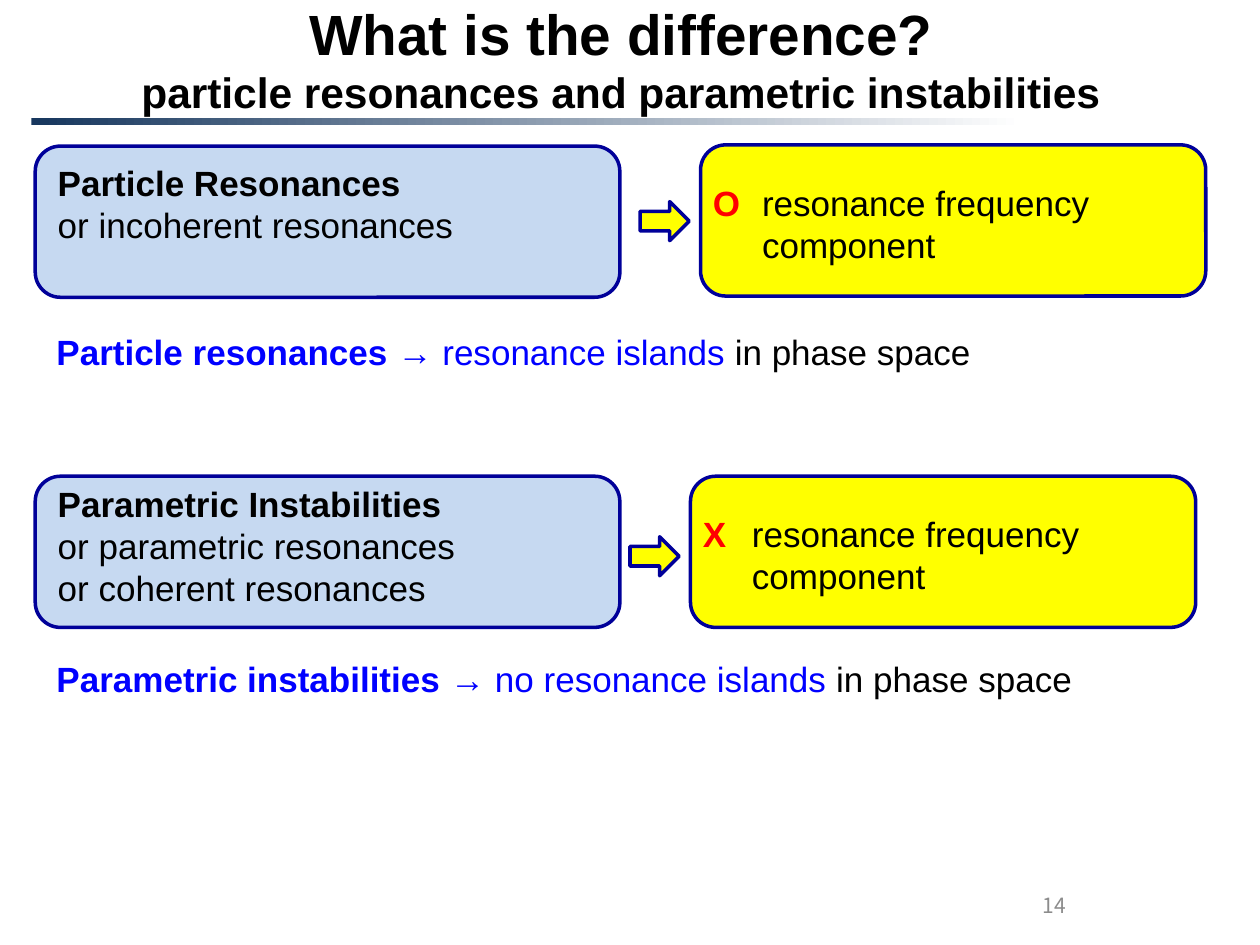
"""Build the slide comparing particle resonances and parametric instabilities."""
from dataclasses import dataclass

from pptx import Presentation
from pptx.dml.color import RGBColor
from pptx.enum.shapes import MSO_SHAPE
from pptx.enum.text import MSO_ANCHOR, PP_ALIGN
from pptx.util import Inches, Pt

COLORS = {
    "black": "000000", "white": "FFFFFF", "navy": "17375E", "outline": "000099",
    "panel": "C6D9F1", "yellow": "FFFF00", "red": "FF0000", "blue": "0000FF",
    "gray": "8C8C8C",
}


@dataclass
class Run:
    """A piece of text with one look."""
    text: str
    color: str = "black"
    bold: bool = False


@dataclass
class Topic:
    """One row: a named topic, its answer and the conclusion below."""
    names: list[str]
    name_top: float
    panel_top: float
    answer_left: float
    answer_top: float
    arrow_top: float
    mark: str
    conclusion_top: float
    conclusion: list[Run]


TOPICS = [
    Topic(["Particle Resonances", "or incoherent resonances"],
          1.23, 1.16, 5.56, 1.15, 1.6, "O", 2.57,
          [Run("Particle resonances ", "blue", True),
           Run("→ resonance islands ", "blue"), Run("in phase space")]),
    Topic(["Parametric Instabilities", "or parametric resonances",
           "or coherent resonances"],
          3.78, 3.78, 5.48, 3.78, 4.26, "X", 5.17,
          [Run("Parametric instabilities ", "blue", True),
           Run("→ no resonance islands ", "blue"), Run("in phase space")]),
]


def rgb(name: str) -> RGBColor:
    """Look up a colour."""
    return RGBColor.from_string(COLORS[name])


def add_block(s, kind, x: float, y: float, w: float, h: float, fill: str):
    """Add a filled, outlined shape."""
    sp = s.shapes.add_shape(kind, Inches(x), Inches(y), Inches(w), Inches(h))
    sp.shadow.inherit = False
    sp.fill.solid()
    sp.fill.fore_color.rgb = rgb(fill)
    sp.line.color.rgb = rgb("outline")
    sp.line.width = Pt(2)


def add_text(s, x: float, y: float, w: float, h: float, lines: list[list[Run]],
             sizes: tuple[float, ...] = (20,), font: str = "Arial",
             align=PP_ALIGN.LEFT, anchor=MSO_ANCHOR.TOP, hang: float = 0):
    """Add a text box with one paragraph for each line; the last size carries on."""
    tf = s.shapes.add_textbox(Inches(x), Inches(y), Inches(w), Inches(h)).text_frame
    tf.word_wrap = True
    tf.vertical_anchor = anchor
    for i, runs in enumerate(lines):
        p = tf.add_paragraph() if i else tf.paragraphs[0]
        p.alignment = align
        if hang:
            pPr = p._p.get_or_add_pPr()
            pPr.set("marL", str(Inches(hang)))
            pPr.set("indent", str(-Inches(hang)))
        p.font.name = font
        p.font.size = Pt(sizes[min(i, len(sizes) - 1)])
        for run in runs:
            r = p.add_run()
            r.text = run.text
            r.font.bold = run.bold
            r.font.color.rgb = rgb(run.color)


def add_rule(s):
    """Add the fading bar under the title."""
    sp = s.shapes.add_shape(MSO_SHAPE.RECTANGLE, Inches(0.25), Inches(0.94),
                            Inches(7.87), Inches(0.05))
    sp.shadow.inherit = False
    sp.line.fill.background()
    sp.fill.gradient()
    sp.fill.gradient_angle = 0
    for stop, color, position in zip(sp.fill.gradient_stops, ("navy", "white"), (0, 1)):
        stop.color.rgb = rgb(color)
        stop.position = position


def add_topic(s, t: Topic):
    """Add one row with its panel, arrow, answer and conclusion."""
    add_block(s, MSO_SHAPE.ROUNDED_RECTANGLE, 0.28, t.panel_top, 4.64, 1.2, "panel")
    names = [[Run(name, bold=i == 0)] for i, name in enumerate(t.names)]
    add_text(s, 0.36, t.name_top, 4.25, 0.1 + 0.34 * len(names), names)
    add_block(s, MSO_SHAPE.ROUNDED_RECTANGLE, t.answer_left, t.answer_top,
              4.01, 1.2, "yellow")
    add_text(s, t.answer_left, t.answer_top + 0.24, 3.93, 0.77,
             [[Run(t.mark, "red", True), Run("\tresonance frequency component")]],
             hang=0.39)
    add_block(s, MSO_SHAPE.RIGHT_ARROW, t.answer_left - 0.48, t.arrow_top,
              0.39, 0.31, "yellow")
    add_text(s, 0.35, t.conclusion_top, 8.9, 0.44, [t.conclusion])


def main():
    """Build and save the slide."""
    prs = Presentation()
    prs.slide_width, prs.slide_height = Inches(10), Inches(7.5)
    s = prs.slides.add_slide(prs.slide_layouts[6])
    add_rule(s)
    add_text(s, 0.35, 0.08, 9.16, 0.76,
             [[Run("What is the difference?", bold=True)],
              [Run("particle resonances and parametric instabilities", bold=True)]],
             sizes=(32.4, 24.3), align=PP_ALIGN.CENTER, anchor=MSO_ANCHOR.MIDDLE)
    add_text(s, 6.23, 6.98, 2.33, 0.4, [[Run("14", "gray")]], sizes=(12,),
             font="Noto Sans CJK KR", align=PP_ALIGN.RIGHT, anchor=MSO_ANCHOR.MIDDLE)
    for t in TOPICS:
        add_topic(s, t)
    prs.save("out.pptx")


if __name__ == "__main__":
    main()
